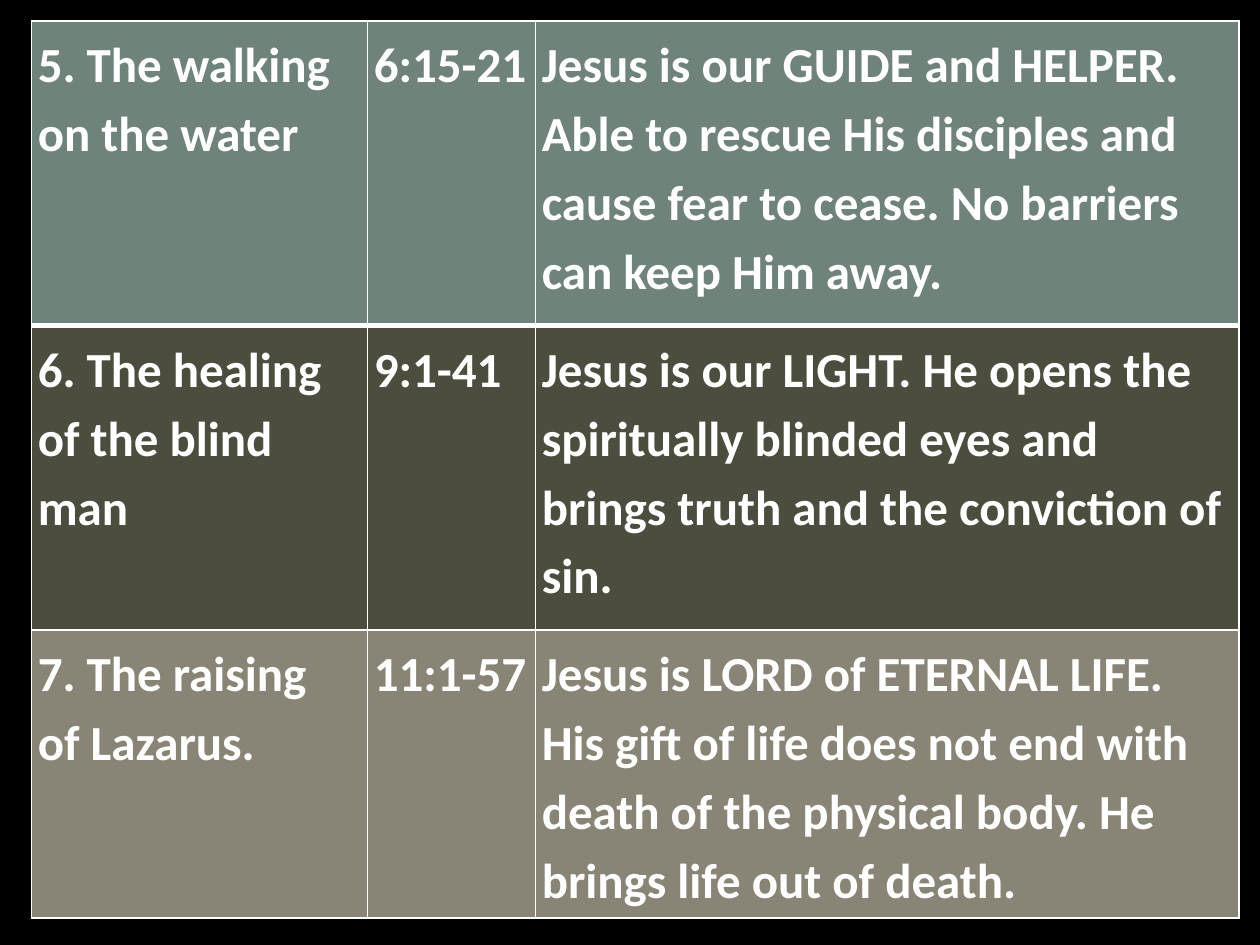
"""Build a table slide of the fifth to seventh signs and what each one teaches."""
from dataclasses import dataclass

from lxml.etree import SubElement
from pptx import Presentation
from pptx.dml.color import RGBColor
from pptx.oxml.ns import qn
from pptx.util import Pt

BLACK = RGBColor(0x00, 0x00, 0x00)
WHITE = RGBColor(0xFF, 0xFF, 0xFF)
SAGE = RGBColor(0x6F, 0x83, 0x7A)
OLIVE = RGBColor(0x4C, 0x4D, 0x3E)
STONE = RGBColor(0x89, 0x85, 0x76)

LEFT, TOP, HEIGHT = 18, 12, 510
COL_WIDTHS = (192, 96, 402)
THIN, THICK = 1, 3


@dataclass(frozen=True)
class Sign:
    texts: tuple[str, str, str]
    fill: RGBColor
    height: float
    top: float = THIN
    bottom: float = THIN


SIGNS = (
    Sign(("5. The walking on the water", "6:15-21",
          "Jesus is our GUIDE and HELPER. Able to rescue His disciples and "
          "cause fear to cease. No barriers can keep Him away."),
         SAGE, 174, bottom=THICK),
    Sign(("6. The healing of the blind man", "9:1-41",
          "Jesus is our LIGHT. He opens the spiritually blinded eyes and "
          "brings truth and the conviction of sin."),
         OLIVE, 174, top=THICK),
    Sign(("7. The raising \nof Lazarus.", "11:1-57",
          "Jesus is LORD of ETERNAL LIFE. His gift of life does not end with "
          "death of the physical body. He brings life out of death."),
         STONE, 144),
)


def write(tf, text: str, *, size: float = 28, font: str = "Calibri",
          color: RGBColor = WHITE, bold: bool = True, spacing: float = 1.15) -> None:
    p = tf.paragraphs[0]
    p.text = text
    p.line_spacing = spacing
    for r in p.runs:
        r.font.size, r.font.name, r.font.bold = Pt(size), font, bold
        r.font.color.rgb = color


def add_borders(cell, top: float, bottom: float, color: RGBColor = WHITE) -> None:
    tc_pr = cell._tc.get_or_add_tcPr()
    for side, width in (("L", THIN), ("R", THIN), ("T", top), ("B", bottom)):
        ln = SubElement(tc_pr, qn(f"a:ln{side}"), w=str(Pt(width)))
        SubElement(SubElement(ln, qn("a:solidFill")), qn("a:srgbClr"), val=str(color))


def fill_cell(cell, text: str, sign: Sign) -> None:
    cell.margin_left = cell.margin_right = Pt(3.6)
    cell.margin_top = cell.margin_bottom = Pt(3.6)
    add_borders(cell, sign.top, sign.bottom)
    cell.fill.solid()
    cell.fill.fore_color.rgb = sign.fill
    write(cell.text_frame, text)


def add_sign_table(s, signs: tuple[Sign, ...]) -> None:
    frame = s.shapes.add_table(len(signs), len(COL_WIDTHS), Pt(LEFT), Pt(TOP),
                               Pt(sum(COL_WIDTHS)), Pt(HEIGHT))
    table = frame.table
    table.first_row = table.horz_banding = False
    for col, width in zip(table.columns, COL_WIDTHS):
        col.width = Pt(width)
    for row, sign in zip(table.rows, signs):
        row.height = Pt(sign.height)
        for cell, text in zip(row.cells, sign.texts):
            fill_cell(cell, text, sign)
    frame.height = Pt(HEIGHT)


def main() -> None:
    prs = Presentation()
    prs.slide_width, prs.slide_height = Pt(720), Pt(540)
    s = prs.slides.add_slide(prs.slide_layouts[6])
    s.background.fill.solid()
    s.background.fill.fore_color.rgb = BLACK
    add_sign_table(s, SIGNS)
    prs.save("out.pptx")


if __name__ == "__main__":
    main()
